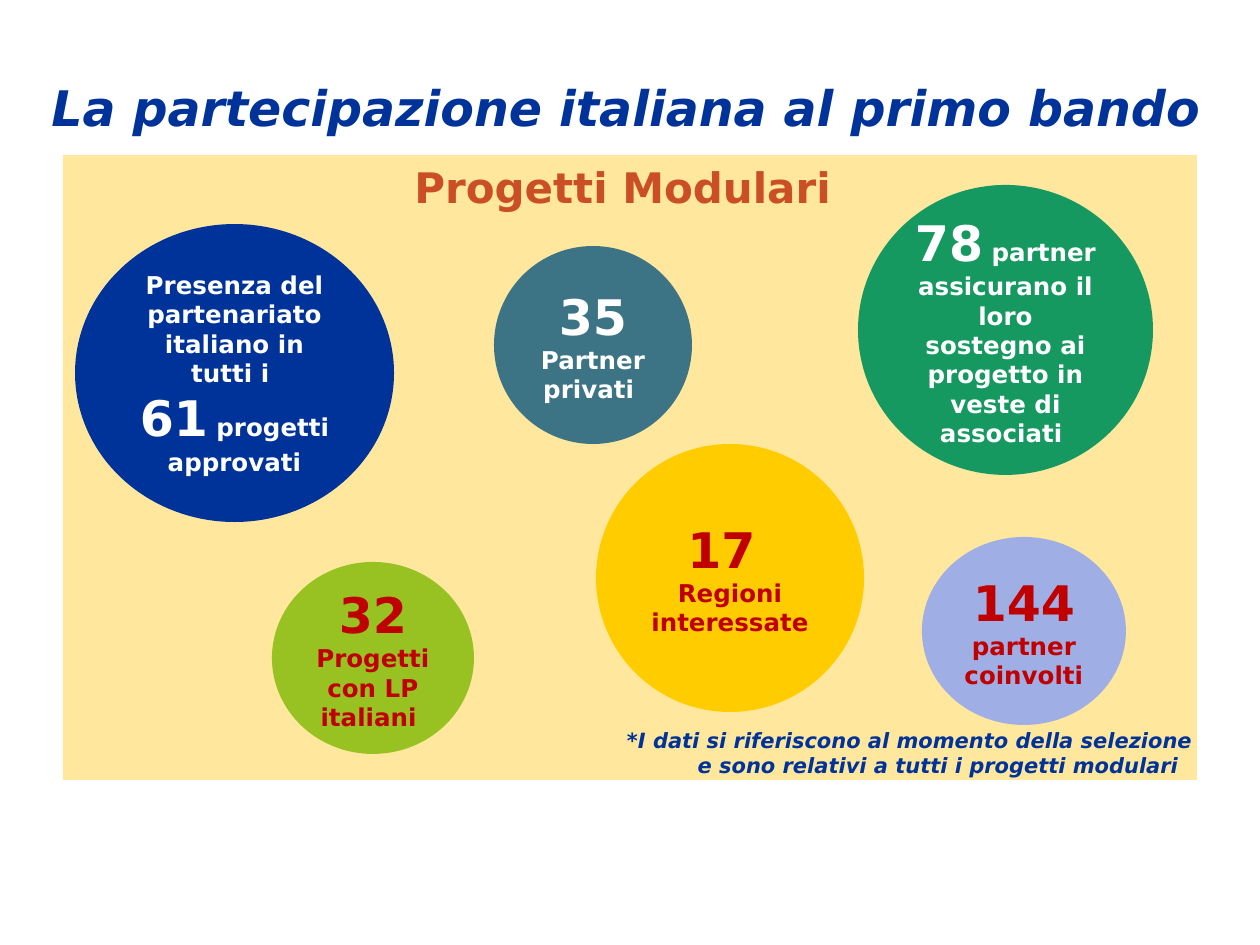
from pptx import Presentation
from pptx.dml.color import RGBColor
from pptx.enum.shapes import MSO_SHAPE
from pptx.enum.text import MSO_ANCHOR, MSO_AUTO_SIZE, PP_ALIGN
from pptx.oxml.ns import qn
from pptx.util import Emu, Pt
from lxml import etree

RECTANGLE, OVAL = MSO_SHAPE.RECTANGLE, MSO_SHAPE.OVAL
TOP, MIDDLE = MSO_ANCHOR.TOP, MSO_ANCHOR.MIDDLE
CENTER, RIGHT = PP_ALIGN.CENTER, PP_ALIGN.RIGHT

FONT = "DejaVu Sans"
EMU_PER_PX = 914400 / 126
BLUE, WHITE, RED = "003399", "FFFFFF", "C00000"
NUMBER_SIZE, LABEL_SIZE = 28, 14

HEADING = "La partecipazione italiana al primo bando"
HEADING_BOX = (35, 37, 1181, 139)
PANEL_HEADING = "Progetti Modulari "
PANEL_BOX = (63, 155, 1134, 625)
FOOTNOTE = [
    "*I dati si riferiscono al momento della selezione",
    "e sono relativi a tutti i progetti modulari",
]
FOOTNOTE_BOX = (491, 721, 714, 63)
FOOTNOTE_INDENT = 14

BUBBLES = [
    ((75, 224, 319, 298), BLUE, WHITE,
     [["Presenza del partenariato italiano in tutti i "], ["61", " progetti approvati"]]),
    ((272, 562, 202, 192), "98C222", RED, [["32", " Progetti con LP italiani "]]),
    ((596, 444, 268, 268), "FFCC00", RED, [["17 ", "\v", "Regioni interessate "]]),
    ((858, 185, 295, 290), "159961", WHITE,
     [["78", " partner assicurano il loro sostegno ai progetto in veste di associati "]]),
    ((922, 537, 204, 188), "9FAEE5", RED, [["144 ", "partner coinvolti "]]),
    ((494, 246, 198, 198), "3C7486", WHITE, [["35", " Partner privati "]]),
]


def px(length):
    return Emu(round(length * EMU_PER_PX))


def rgb(color):
    return RGBColor.from_string(color)


def style(run, size, color, italic=False):
    font = run.font
    font.name, font.size, font.bold, font.italic = FONT, Pt(size), True, italic
    font.color.rgb = rgb(color)


def add_filled(slide, kind, box, color, anchor):
    shape = slide.shapes.add_shape(kind, *map(px, box))
    shape.shadow.inherit = False
    shape.fill.solid()
    shape.fill.fore_color.rgb = rgb(color)
    shape.line.fill.background()
    shape.text_frame.word_wrap = True
    shape.text_frame.vertical_anchor = anchor
    return shape


def add_heading(slide):
    title = slide.shapes.title
    title.left, title.top, title.width, title.height = map(px, HEADING_BOX)
    frame = title.text_frame
    frame.text = HEADING
    frame.auto_size = MSO_AUTO_SIZE.NONE
    frame.vertical_anchor = MIDDLE
    frame.paragraphs[0].alignment = CENTER
    style(frame.paragraphs[0].runs[0], 28, BLUE, italic=True)


def add_panel(slide):
    panel = add_filled(slide, RECTANGLE, PANEL_BOX, "FFC000", TOP)
    fill_color = panel.fill._xPr.find(qn("a:solidFill"))[0]
    etree.SubElement(fill_color, qn("a:alpha"), val="38000")
    paragraph = panel.text_frame.paragraphs[0]
    paragraph.text = PANEL_HEADING
    paragraph.alignment = CENTER
    style(paragraph.runs[0], 24, "CA4F24")


def add_bubble(slide, box, fill, text_color, paragraphs):
    frame = add_filled(slide, OVAL, box, fill, MIDDLE).text_frame
    frame.text = "\n".join("" for _ in paragraphs)
    for paragraph, parts in zip(frame.paragraphs, paragraphs):
        paragraph.alignment = CENTER
        for part in parts:
            if part == "\v":
                paragraph.add_line_break()
                continue
            run = paragraph.add_run()
            run.text = part
            size = NUMBER_SIZE if part.strip().isdigit() else LABEL_SIZE
            style(run, size, text_color)


def add_footnote(slide):
    frame = slide.shapes.add_textbox(*map(px, FOOTNOTE_BOX)).text_frame
    frame.word_wrap = True
    frame.text = "\n".join(FOOTNOTE)
    for paragraph in frame.paragraphs:
        paragraph.alignment = RIGHT
        style(paragraph.runs[0], 12, BLUE, italic=True)
    frame.paragraphs[-1]._p.get_or_add_pPr().set("marR", str(px(FOOTNOTE_INDENT)))


def main():
    deck = Presentation()
    deck.slide_width, deck.slide_height = px(1260), px(945)
    slide = deck.slides.add_slide(deck.slide_layouts[5])
    add_heading(slide)
    add_panel(slide)
    for bubble in BUBBLES:
        add_bubble(slide, *bubble)
    add_footnote(slide)
    deck.save("out.pptx")


if __name__ == "__main__":
    main()
